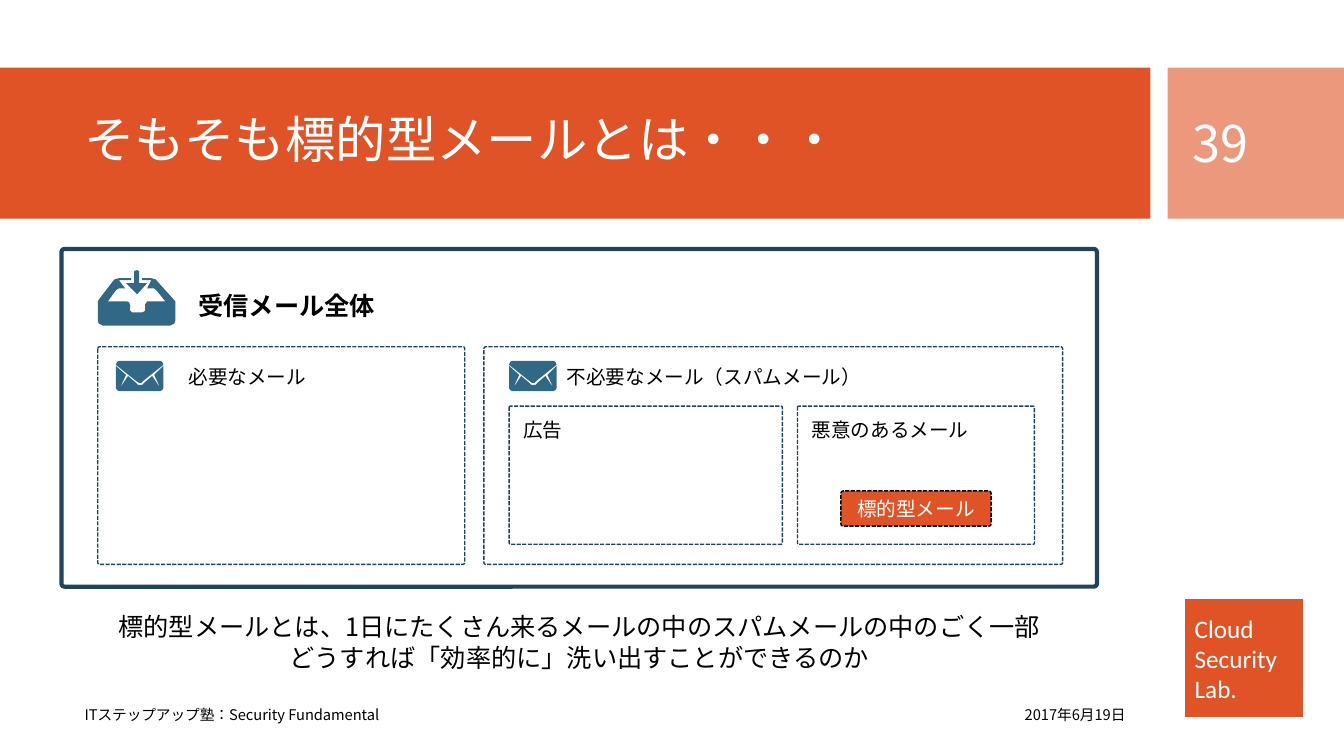
from dataclasses import dataclass

from pptx import Presentation
from pptx import util as u
from pptx.dml.color import RGBColor
from pptx.enum import dml, lang, shapes, text
from pptx.oxml.ns import qn

PX = 9144


@dataclass(frozen=True)
class Theme:
    orange: str = "DF5327"
    salmon: str = "EC987D"
    navy: str = "20455A"
    blue: str = "316886"
    white: str = "FFFFFF"
    black: str = "000000"
    font: str = "Noto Sans CJK JP"
    latin: str = "Calibri"
    title: float = 36
    body: float = 18
    label: float = 14
    footer: float = 10.5


T = Theme()
LEFT, CENTER, RIGHT = text.PP_ALIGN.LEFT, text.PP_ALIGN.CENTER, text.PP_ALIGN.RIGHT
TOP, MIDDLE = text.MSO_ANCHOR.TOP, text.MSO_ANCHOR.MIDDLE

INBOX = [
    [(150, 276), (154, 277), (156, 279), (174, 299), (174, 318), (173, 321),
     (169, 323), (102, 323), (98, 321), (97, 318), (97, 299), (99, 296),
     (112, 279), (114, 277), (118, 276), (130, 276), (130, 278), (118, 278),
     (124, 286), (118, 286), (115, 288), (107, 299), (126, 299), (128, 300),
     (129, 302), (129, 308), (131, 310), (141, 310), (143, 309), (144, 308),
     (144, 302), (146, 299), (164, 299), (156, 289), (153, 286), (146, 286),
     (150, 278), (141, 278), (141, 276)],
    [(136, 268), (138, 269), (138, 281), (146, 281), (136, 292), (125, 281),
     (133, 281), (133, 269)],
]
ENVELOPE = [
    [(20, 20), (23, 22), (25, 22), (27, 20), (47, 4), (46, 1), (44, 0),
     (3, 0), (1, 1), (0, 4)],
    [(38, 14), (44, 27), (36, 15), (29, 21), (26, 24), (22, 24), (19, 21),
     (12, 15), (4, 27), (10, 14), (0, 5), (0, 27), (1, 29), (3, 30),
     (44, 30), (46, 29), (47, 27), (47, 5)],
]


def rgb(color):
    return RGBColor.from_string(color)


def emu(*lengths):
    return [u.Emu(n * PX) for n in lengths]


def write(sp, words, size, color, align=LEFT, anchor=TOP, wrap=True,
          bold=False, font=T.font, spacing=None):
    tf = sp.text_frame
    tf.word_wrap = wrap
    tf.vertical_anchor = anchor
    tf.text = words
    for p in tf.paragraphs:
        p.alignment = align
        p.line_spacing = spacing
        for r in p.runs:
            r.font.size = u.Pt(size)
            r.font.bold = bold
            r.font.name = font
            r.font.language_id = lang.MSO_LANGUAGE_ID.JAPANESE
            r.font.color.rgb = rgb(color)
            ea = r.font._element.makeelement(qn("a:ea"), {"typeface": T.font})
            r.font._element.find(qn("a:latin")).addnext(ea)


def add_text(s, box, words, size, color=T.black, **style):
    write(s.shapes.add_textbox(*emu(*box)), words, size, color, **style)


def add_label(s, box, words, size=T.label, bold=False):
    add_text(s, box, words, size, wrap=False, bold=bold)


def add_block(s, box, fill=None, line=None, width=1, dashed=False, radius=None):
    kind = shapes.MSO_SHAPE.RECTANGLE if radius is None else shapes.MSO_SHAPE.ROUNDED_RECTANGLE
    sp = s.shapes.add_shape(kind, *emu(*box))
    sp.shadow.inherit = False
    if radius is not None:
        sp.adjustments[0] = radius
    if fill:
        sp.fill.solid()
        sp.fill.fore_color.rgb = rgb(fill)
    else:
        sp.fill.background()
    if line:
        sp.line.color.rgb = rgb(line)
        sp.line.width = u.Pt(width)
        if dashed:
            sp.line.dash_style = dml.MSO_LINE.SQUARE_DOT
    else:
        sp.line.fill.background()
    return sp


def add_group_frame(s, box):
    add_block(s, box, line=T.navy, dashed=True, radius=0.009)


def add_icon(s, contours, left=0, top=0):
    moved = [[(x + left, y + top) for x, y in c] for c in contours]
    fb = s.shapes.build_freeform(*moved[0][0], scale=PX)
    fb.add_line_segments(moved[0][1:], close=True)
    for contour in moved[1:]:
        fb.move_to(*contour[0])
        fb.add_line_segments(contour[1:], close=True)
    sp = fb.convert_to_shape()
    sp.shadow.inherit = False
    sp.fill.solid()
    sp.fill.fore_color.rgb = rgb(T.blue)
    sp.line.fill.background()


def add_banner(s):
    lab = add_block(s, (1175, 594, 118, 118), T.orange, T.white)
    write(lab, "Cloud\nSecurity\nLab.", T.body, T.white, anchor=MIDDLE, font=T.latin)
    add_block(s, (0, 67, 1141, 150), T.orange)
    add_block(s, (1158, 67, 175, 150), T.salmon)
    add_text(s, (74, 82, 1051, 118), "そもそも標的型メールとは・・・", T.title,
             T.white, anchor=MIDDLE, spacing=0.9)
    add_text(s, (1173, 82, 126, 119), "39", T.title, T.white, anchor=MIDDLE)


def add_footer(s):
    add_text(s, (826, 689, 300, 40), "2017年6月19日", T.footer,
             align=RIGHT, anchor=MIDDLE)
    add_text(s, (74, 689, 751, 40), "ITステップアップ塾：Security Fundamental",
             T.footer, anchor=MIDDLE)


def add_mail_map(s):
    add_block(s, (61, 247, 1027, 335), line=T.navy, width=3, radius=0.009)
    add_icon(s, INBOX)
    add_label(s, (187, 283, 197, 40), "受信メール全体", T.body, bold=True)
    for box in ((97, 344, 364, 216), (480, 344, 574, 216),
                (505, 403, 271, 137), (791, 403, 235, 137)):
        add_group_frame(s, box)
    for left in (115, 505):
        add_icon(s, ENVELOPE, left, 358)
    add_label(s, (177, 357, 138, 34), "必要なメール")
    add_label(s, (552, 357, 315, 34), "不必要なメール（スパムメール）")
    add_label(s, (509, 410, 59, 34), "広告")
    add_label(s, (795, 410, 177, 34), "悪意のあるメール")
    target = add_block(s, (834, 487, 149, 35), T.orange, T.black, dashed=True, radius=0.067)
    write(target, "標的型メール", T.label, T.white, align=CENTER, anchor=MIDDLE, wrap=False)


def main():
    prs = Presentation()
    prs.slide_width, prs.slide_height = emu(1333, 750)
    s = prs.slides.add_slide(prs.slide_layouts[6])
    add_banner(s)
    add_footer(s)
    add_mail_map(s)
    add_text(s, (61, 602, 1027, 71),
             "標的型メールとは、1日にたくさん来るメールの中のスパムメールの中のごく一部\n"
             "どうすれば「効率的に」洗い出すことができるのか",
             T.body, align=CENTER)
    prs.save("out.pptx")


if __name__ == "__main__":
    main()
